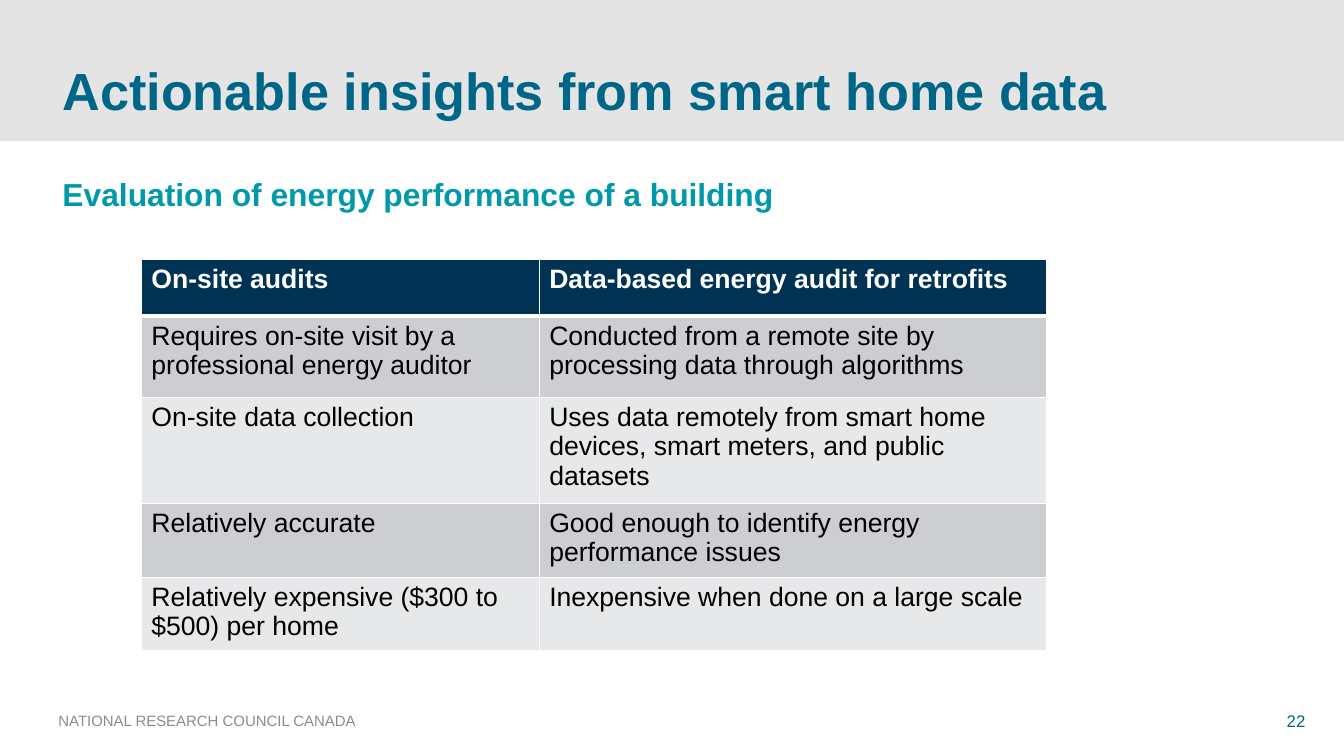
from lxml import etree
from pptx import Presentation
from pptx.dml.color import RGBColor
from pptx.enum import shapes, text
from pptx.oxml.ns import qn
from pptx.util import Pt

NAVY, BLUE, TEAL = "003353", "006688", "0099AA"
WHITE, BLACK, GREY, BAND = "FFFFFF", "000000", "8C8C8C", "E4E4E4"
ROW_FILLS = ("E7E8E9", "CCCED1")


def colour(code):
    return RGBColor.from_string(code)


class SlideBuilder:
    def __init__(self, slide, font="Arial"):
        self.slide = slide
        self.font = font

    def style(self, paragraph, size, code, bold=False):
        font = paragraph.font
        font.name, font.size, font.bold = self.font, Pt(size), bold
        font.color.rgb = colour(code)

    def band(self, left, top, width, height, code):
        band = self.slide.shapes.add_shape(
            shapes.MSO_SHAPE.RECTANGLE, Pt(left), Pt(top), Pt(width), Pt(height))
        band.shadow.inherit = False
        band.fill.solid()
        band.fill.fore_color.rgb = colour(code)
        band.line.fill.background()

    def text(self, box, wording, size, code, bold=False,
             anchor=text.MSO_ANCHOR.MIDDLE, inset=True):
        frame = self.slide.shapes.add_textbox(*map(Pt, box)).text_frame
        frame.word_wrap = True
        frame.vertical_anchor = anchor
        if not inset:
            frame.margin_left = frame.margin_right = 0
            frame.margin_top = frame.margin_bottom = 0
        paragraph = frame.paragraphs[0]
        paragraph.text = wording
        self.style(paragraph, size, code, bold)

    def borders(self, cell, code, **widths):
        properties = cell._tc.get_or_add_tcPr()
        for side in "LRTB":
            line = etree.SubElement(properties, qn(f"a:ln{side}"),
                                    w=str(Pt(widths.get(side, 1))))
            fill = etree.SubElement(line, qn("a:solidFill"))
            etree.SubElement(fill, qn("a:srgbClr"), val=code)

    def table(self, left, top, widths, heights, rows, size):
        table = self.slide.shapes.add_table(
            len(rows), len(widths), Pt(left), Pt(top),
            Pt(sum(widths)), Pt(sum(heights))).table
        for column, width in zip(table.columns, widths):
            column.width = Pt(width)
        for r, (height, row) in enumerate(zip(heights, rows)):
            table.rows[r].height = Pt(height)
            header = r == 0
            for c, wording in enumerate(row):
                cell = table.cell(r, c)
                cell.text = wording
                self.style(cell.text_frame.paragraphs[0], size,
                           WHITE if header else BLACK, header)
                # Borders come before the fill in the cell properties
                self.borders(cell, WHITE, T=3 if r == 1 else 1, B=3 if header else 1)
                cell.fill.solid()
                cell.fill.fore_color.rgb = colour(NAVY if header else ROW_FILLS[r % 2])


def main():
    deck = Presentation()
    deck.slide_width, deck.slide_height = Pt(960), Pt(540)
    page = SlideBuilder(deck.slides.add_slide(deck.slide_layouts[6]))

    # Title band and headings
    page.band(0, 0, 960, 100.8, BAND)
    page.text((44.64, 14.4, 859, 72), "Actionable insights from smart home data",
              37.3, BLUE, True, text.MSO_ANCHOR.BOTTOM, inset=False)
    page.text((44.64, 124.56, 859, 30), "Evaluation of energy performance of a building",
              22.7, TEAL, True, text.MSO_ANCHOR.TOP, inset=False)

    # Comparison of audit methods
    audits = [
        ("On-site audits", "Data-based energy audit for retrofits"),
        ("Requires on-site visit by a professional energy auditor",
         "Conducted from a remote site by processing data through algorithms"),
        ("On-site data collection",
         "Uses data remotely from smart home devices, smart meters, and public datasets"),
        ("Relatively accurate", "Good enough to identify energy performance issues"),
        ("Relatively expensive ($300 to $500) per home",
         "Inexpensive when done on a large scale"),
    ]
    page.table(101, 185.4, (284.2, 362.2), (40.4, 58, 74.2, 52, 52), audits, 19)

    # Footer
    page.text((34.6, 500.4, 373, 28.8), "NATIONAL RESEARCH COUNCIL CANADA", 10.7, GREY)
    page.text((912, 500.4, 48, 28.8), "22", 12, BLUE)

    deck.save("out.pptx")


if __name__ == "__main__":
    main()
